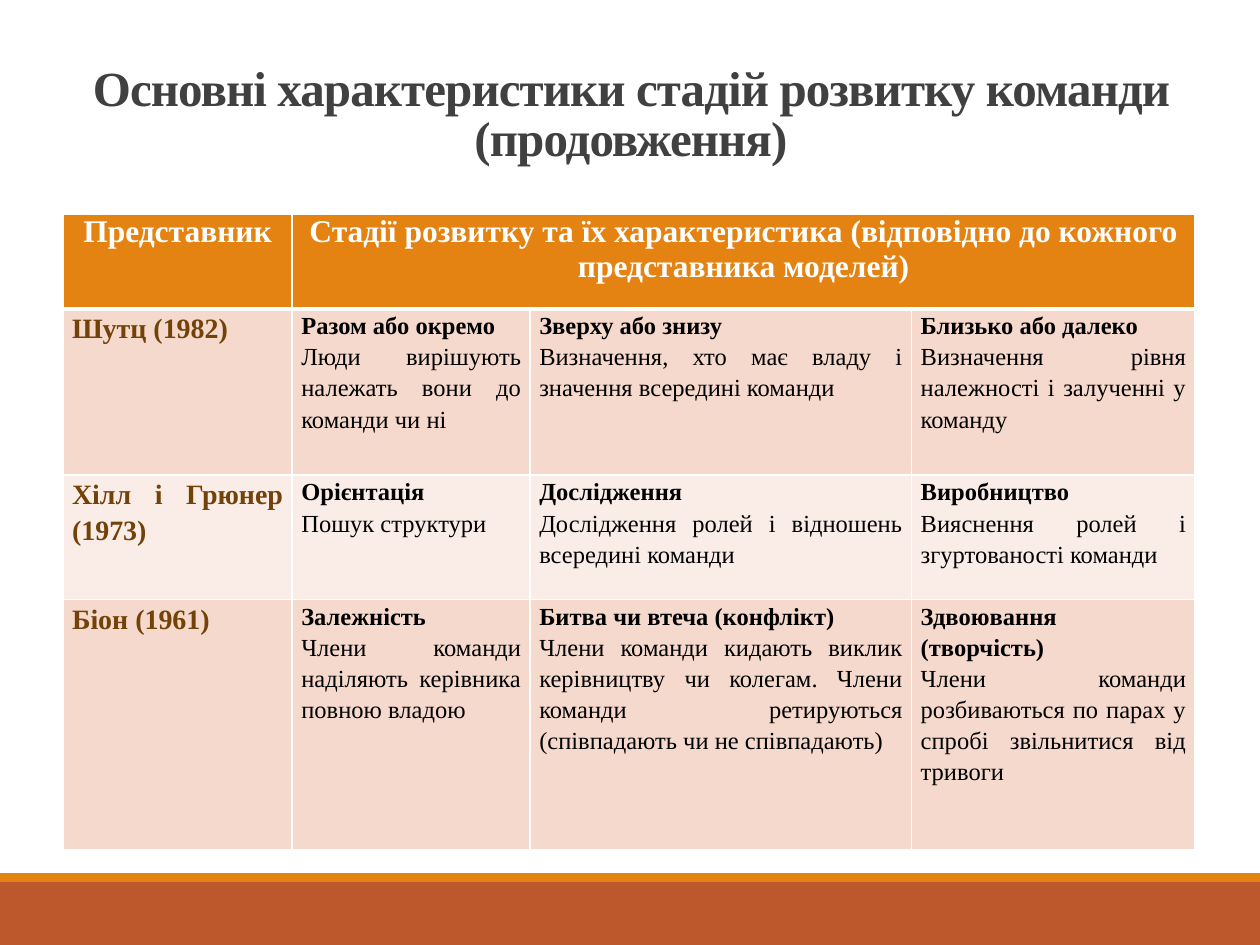
from lxml import etree
from pptx import Presentation
from pptx import util as u
from pptx.dml.color import RGBColor
from pptx.enum import shapes, text
from pptx.oxml import ns

WHITE = RGBColor(0xFF, 0xFF, 0xFF)
BLACK = RGBColor(0x00, 0x00, 0x00)
GRAY = RGBColor(0x40, 0x40, 0x40)
BROWN = RGBColor(0x72, 0x42, 0x09)
ORANGE = RGBColor(0xE4, 0x83, 0x12)
RUST = RGBColor(0xBD, 0x58, 0x2C)
BANDS = (RGBColor(0xF5, 0xD9, 0xCC), RGBColor(0xFA, 0xED, 0xE7))

WIDTH, HEIGHT = 720, 540
COLUMN_WIDTHS = (131, 136, 218, 162)
ROW_HEIGHTS = (54, 95, 71, 143)

TITLE = "Основні характеристики стадій розвитку команди (продовження)"
HEADER = (
    "Представник",
    "Стадії розвитку та їх характеристика (відповідно до кожного представника моделей)",
)
# Each row: representative, then three stages of bold heading lines and a description
ROWS = (
    ("Шутц (1982)",
     "Разом або окремо\nЛюди вирішують належать вони до команди чи ні",
     "Зверху або знизу\nВизначення, хто має владу і значення всередині команди",
     "Близько або далеко\nВизначення рівня належності і залученні у команду"),
    ("Хілл і Грюнер (1973)",
     "Орієнтація\nПошук структури",
     "Дослідження\nДослідження ролей і відношень всередині команди",
     "Виробництво\nВияснення ролей і згуртованості команди"),
    ("Біон (1961)",
     "Залежність\nЧлени команди наділяють керівника повною владою",
     "Битва чи втеча (конфлікт)\nЧлени команди кидають виклик керівництву чи колегам. "
     "Члени команди ретируються (співпадають чи не співпадають)",
     "Здвоювання\n(творчість)\nЧлени команди розбиваються по парах у спробі "
     "звільнитися від тривоги"),
)


class SlideBuilder:
    """Holds the slide and its style; all lengths are in points."""

    font = "Times New Roman"

    def __init__(self, slide):
        self.slide = slide

    def style(self, paragraph, size, color, align, bold=True, spacing=None):
        paragraph.alignment = align
        paragraph.line_spacing = spacing
        for run in paragraph.runs:
            run.font.name = self.font
            run.font.size = u.Pt(size)
            run.font.bold = bold
            run.font.color.rgb = color

    def bar(self, top, height, color):
        shape = self.slide.shapes.add_shape(
            shapes.MSO_SHAPE.RECTANGLE, 0, u.Pt(top), u.Pt(WIDTH), u.Pt(height))
        shape.shadow.inherit = False
        shape.fill.solid()
        shape.fill.fore_color.rgb = color
        shape.line.fill.background()

    def title(self, left, top, width, height, wording):
        box = self.slide.shapes.add_textbox(*map(u.Pt, (left, top, width, height)))
        frame = box.text_frame
        frame.word_wrap = True
        frame.vertical_anchor = text.MSO_ANCHOR.BOTTOM
        frame.text = wording
        paragraph = frame.paragraphs[0]
        self.style(paragraph, 28, GRAY, text.PP_ALIGN.CENTER, spacing=0.85)
        paragraph.runs[0].font._element.set("spc", "-50")

    def table(self, left, top, widths, heights):
        frame = self.slide.shapes.add_table(
            len(heights), len(widths),
            *map(u.Pt, (left, top, sum(widths), sum(heights))))
        table = frame.table
        for column, width in zip(table.columns, widths):
            column.width = u.Pt(width)
        for row, height in zip(table.rows, heights):
            row.height = u.Pt(height)
        return table

    def cell(self, cell, fill, wording="", top_line=1, bottom_line=1):
        cell.margin_left = cell.margin_right = u.Pt(5.2)
        cell.margin_top = cell.margin_bottom = 0
        cell.fill.solid()
        cell.fill.fore_color.rgb = fill
        cell.text_frame.text = wording
        # Borders come before the fill in the cell properties
        properties = cell._tc.get_or_add_tcPr()
        edges = (("lnL", 1), ("lnR", 1), ("lnT", top_line), ("lnB", bottom_line))
        for position, (edge, width) in enumerate(edges):
            line = etree.Element(ns.qn(f"a:{edge}"), w=str(u.Pt(width)))
            solid = etree.SubElement(line, ns.qn("a:solidFill"))
            etree.SubElement(solid, ns.qn("a:srgbClr"), val=str(WHITE))
            properties.insert(position, line)
        return cell.text_frame.paragraphs


def main():
    presentation = Presentation()
    presentation.slide_width = u.Pt(WIDTH)
    presentation.slide_height = u.Pt(HEIGHT)
    builder = SlideBuilder(presentation.slides.add_slide(presentation.slide_layouts[6]))

    # Footer bars
    builder.bar(504, 36, RUST)
    builder.bar(499, 5, ORANGE)

    builder.title(36.5, 31.5, 648, 67, TITLE)

    # Table header, with the second cell spanning all stages
    table = builder.table(36, 122.5, COLUMN_WIDTHS, ROW_HEIGHTS)
    table.cell(0, 1).merge(table.cell(0, 3))
    for column in range(len(COLUMN_WIDTHS)):
        wording = HEADER[column] if column < len(HEADER) else ""
        for paragraph in builder.cell(table.cell(0, column), ORANGE, wording, bottom_line=3):
            builder.style(paragraph, 18, WHITE, text.PP_ALIGN.CENTER)

    # Table body: representatives in brown, stages in black
    for row, wordings in enumerate(ROWS, start=1):
        for column, wording in enumerate(wordings):
            paragraphs = builder.cell(table.cell(row, column), BANDS[(row - 1) % 2], wording,
                                      top_line=3 if row == 1 else 1)
            size, color = (14, BLACK) if column else (16, BROWN)
            for number, paragraph in enumerate(paragraphs, start=1):
                bold = column == 0 or number < len(paragraphs)
                builder.style(paragraph, size, color, text.PP_ALIGN.JUSTIFY, bold, 1.15)

    presentation.save("out.pptx")


if __name__ == "__main__":
    main()
